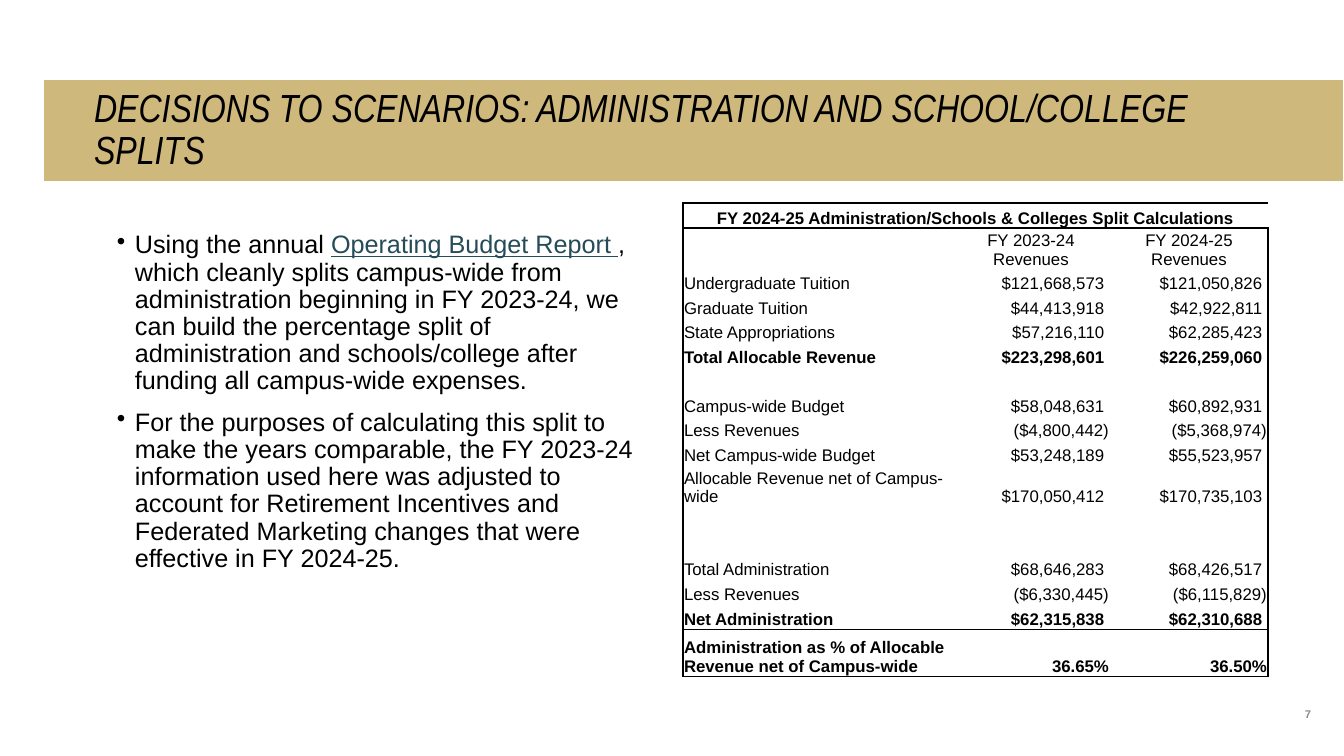
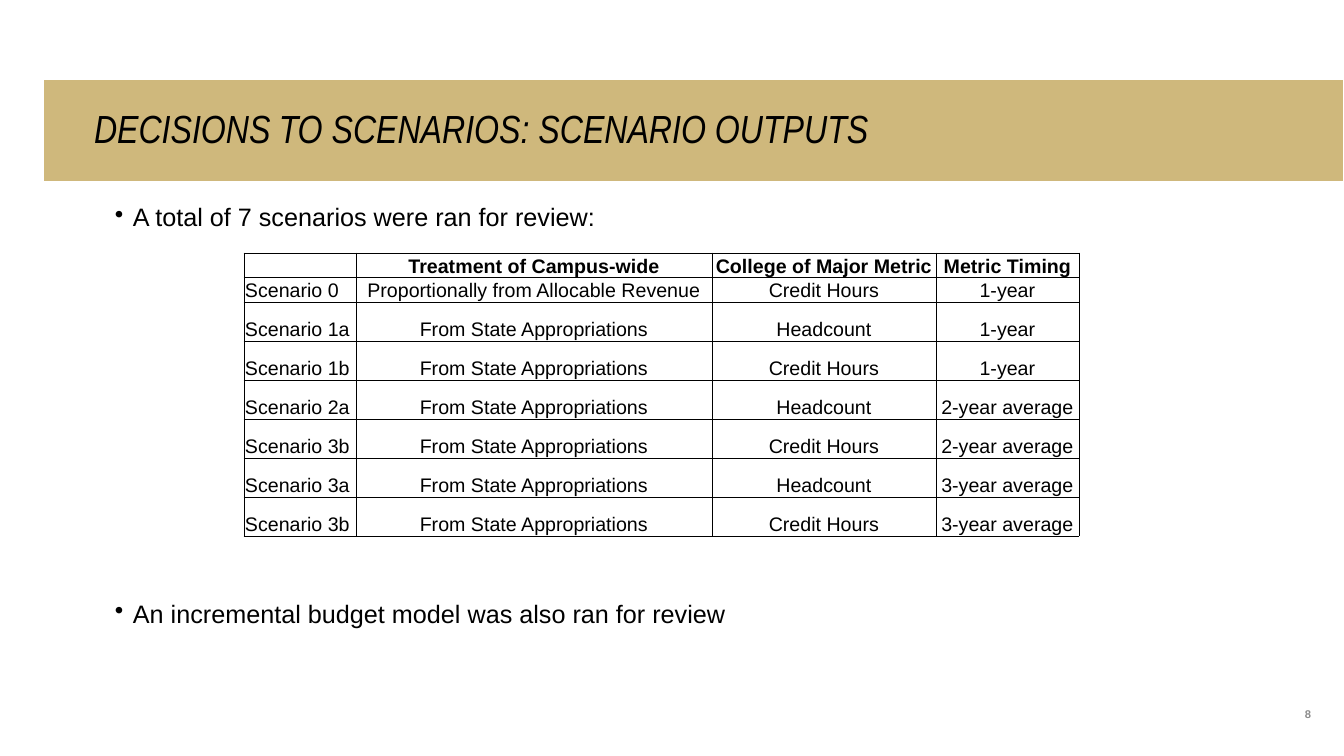
import pptx
import pptx.dml.color
import pptx.enum.text
import pptx.oxml.ns
import pptx.util
from lxml import etree

SCALE = 12192000 / 1344
COLOURS = {"band": "CFB87C", "ink": "000000", "link": "244C59", "number": "8C8C8C"}
BODY_FONT = "Arial"
TITLE_FONT = "Arial Narrow"
BAND_BOX = (44, 80, 1299, 101)
NUMBER_BOX = (1225, 671, 86, 50)
NO_GRID_STYLE = "{2D5ABB26-0587-4C30-8999-92F81FD0307C}"
ALIGN = pptx.enum.text.PP_ALIGN
ANCHOR = pptx.enum.text.MSO_ANCHOR

SPLIT_TITLE = "FY 2024-25 Administration/Schools & Colleges Split Calculations"
SPLIT_ROWS = [
    (SPLIT_TITLE, "", ""),
    ("", "FY 2023-24 Revenues", "FY 2024-25 Revenues"),
    ("Undergraduate Tuition", "$121,668,573 ", "$121,050,826 "),
    ("Graduate Tuition", "$44,413,918 ", "$42,922,811 "),
    ("State Appropriations", "$57,216,110 ", "$62,285,423 "),
    ("Total Allocable Revenue", "$223,298,601 ", "$226,259,060 "),
    ("", "", ""),
    ("Campus-wide Budget", "$58,048,631 ", "$60,892,931 "),
    ("Less Revenues", "($4,800,442)", "($5,368,974)"),
    ("Net Campus-wide Budget", "$53,248,189 ", "$55,523,957 "),
    ("Allocable Revenue net of Campus-wide", "$170,050,412 ", "$170,735,103 "),
    ("", "", ""),
    ("", "", ""),
    ("Total Administration", "$68,646,283 ", "$68,426,517 "),
    ("Less Revenues", "($6,330,445)", "($6,115,829)"),
    ("Net Administration", "$62,315,838 ", "$62,310,688 "),
    ("Administration as % of Allocable Revenue net of Campus-wide", "36.65%", "36.50%"),
]
SPLIT_HEIGHTS = [25, 38] + [24, 25] * 4 + [41] + [24, 25] * 2 + [25, 47]
SPLIT_BOLD_ROWS = {0, 5, 15, 16}

STATE = "From State Appropriations"
SCENARIO_ROWS = [
    ("", "Treatment of Campus-wide", "College of Major Metric", "Metric Timing"),
    ("Scenario 0", "Proportionally from Allocable Revenue", "Credit Hours", "1-year"),
    ("Scenario 1a", STATE, "Headcount", "1-year"),
    ("Scenario 1b", STATE, "Credit Hours", "1-year"),
    ("Scenario 2a", STATE, "Headcount", "2-year average"),
    ("Scenario 3b", STATE, "Credit Hours", "2-year average"),
    ("Scenario 3a", STATE, "Headcount", "3-year average"),
    ("Scenario 3b", STATE, "Credit Hours", "3-year average"),
]


def px(length):
    """Turn px into EMU."""
    return pptx.util.Emu(round(length * SCALE))


def style_font(font, size, colour="ink", name=BODY_FONT, bold=False, italic=False):
    """Set every font property of a run or paragraph."""
    font.name, font.size = name, pptx.util.Pt(size)
    font.bold, font.italic = bold, italic
    font.color.rgb = pptx.dml.color.RGBColor.from_string(COLOURS[colour])


def add_span(para, text, size, **style):
    """Add one formatted run to a paragraph."""
    span = para.add_run()
    span.text = text
    style_font(span.font, size, **style)
    return span


def set_margins(frame, left, top, right, bottom):
    """Set the insets of a text frame or cell."""
    frame.margin_left, frame.margin_top = px(left), px(top)
    frame.margin_right, frame.margin_bottom = px(right), px(bottom)


def add_textbox(slide, box):
    """Add a wrapping text box and return its frame."""
    frame = slide.shapes.add_textbox(*map(px, box)).text_frame
    frame.word_wrap = True
    set_margins(frame, 10, 5, 10, 5)
    return frame


def add_title_slide(deck, title, number):
    """Add a slide with the title band and the slide number."""
    slide = deck.slides.add_slide(deck.slide_layouts[5])
    band = slide.shapes.title
    band.left, band.top, band.width, band.height = map(px, BAND_BOX)
    band.fill.solid()
    band.fill.fore_color.rgb = pptx.dml.color.RGBColor.from_string(COLOURS["band"])
    frame = band.text_frame
    frame.word_wrap = True
    frame.auto_size = pptx.enum.text.MSO_AUTO_SIZE.NONE
    frame.vertical_anchor = ANCHOR.MIDDLE
    set_margins(frame, 50, 5, 101, 5)
    para = frame.paragraphs[0]
    para.alignment, para.line_spacing = ALIGN.LEFT, 0.9
    add_span(para, title, 28, name=TITLE_FONT, italic=True)

    frame = add_textbox(slide, NUMBER_BOX)
    frame.vertical_anchor = ANCHOR.BOTTOM
    set_margins(frame, 0, 0, 0, 0)
    para = frame.paragraphs[0]
    para.alignment = ALIGN.RIGHT
    add_span(para, str(number), 8, colour="number", bold=True)
    return slide


def add_bullets(slide, box, items, gap):
    """Add bulleted paragraphs, each a list of text and colour pairs."""
    frame = add_textbox(slide, box)
    for index, item in enumerate(items):
        para = frame.paragraphs[0] if index == 0 else frame.add_paragraph()
        properties = para._p.get_or_add_pPr()
        properties.set("marL", str(px(32)))
        properties.set("indent", str(-px(18)))
        bullet = etree.SubElement(properties, pptx.oxml.ns.qn("a:buChar"))
        bullet.set("char", "•")
        para.line_spacing = 0.9
        if index:
            para.space_before = pptx.util.Pt(gap)
        for text, colour in item:
            span = add_span(para, text, 18, colour=colour)
            span.font.underline = colour == "link"


def set_borders(cell, sides, width):
    """Draw the named sides of a cell and clear the others."""
    properties = cell._tc.get_or_add_tcPr()
    for side in "LRTB":
        line = etree.SubElement(properties, pptx.oxml.ns.qn(f"a:ln{side}"))
        if side in sides:
            line.set("w", str(pptx.util.Pt(width)))
            fill = etree.SubElement(line, pptx.oxml.ns.qn("a:solidFill"))
            colour = etree.SubElement(fill, pptx.oxml.ns.qn("a:srgbClr"))
            colour.set("val", COLOURS["ink"])
        else:
            etree.SubElement(line, pptx.oxml.ns.qn("a:noFill"))
    cell.fill.background()


def add_grid(slide, corner, widths, heights, rows, size, line_width, bold_rows, align_of, sides_of):
    """Add a plain table whose alignment and borders follow the given rules."""
    box = (*corner, sum(widths), sum(heights))
    table = slide.shapes.add_table(len(rows), len(widths), *map(px, box)).table
    table.first_row = table.horz_banding = False
    table._tbl.tblPr.find(pptx.oxml.ns.qn("a:tableStyleId")).text = NO_GRID_STYLE
    for column, width in zip(table.columns, widths):
        column.width = px(width)
    for row, height in zip(table.rows, heights):
        row.height = px(height)
    for r, texts in enumerate(rows):
        for c, text in enumerate(texts):
            cell = table.cell(r, c)
            cell.vertical_anchor = ANCHOR.BOTTOM
            set_margins(cell, 1, 1, 1, 0)
            set_borders(cell, sides_of(r, c), line_width)
            para = cell.text_frame.paragraphs[0]
            para.alignment = align_of(r, c)
            if text:
                add_span(para, text, size, bold=r in bold_rows)
            else:
                style_font(para.font, size)
                para._p.get_or_add_endParaRPr().set("sz", str(size * 100))
    return table


def split_align(r, c):
    """Centre the headings and set amounts to the right."""
    if r < 2:
        return ALIGN.CENTER
    return ALIGN.RIGHT if c else ALIGN.LEFT


def split_sides(r, c):
    """Frame the table and rule off its first and last rows."""
    last = len(SPLIT_ROWS) - 1
    sides = {0: "L", 2: "R"}.get(c, "")
    sides += "T" if r in (0, 1, last) else ""
    return sides + ("B" if r in (0, last - 1, last) else "")


def build_split_slide(deck):
    """Build the slide on the administration split."""
    slide = add_title_slide(
        deck, "DECISIONS TO SCENARIOS: ADMINISTRATION AND SCHOOL/COLLEGE SPLITS", 7)
    table = add_grid(slide, (683, 203), [269, 158, 158], SPLIT_HEIGHTS, SPLIT_ROWS, 12, 1,
                     SPLIT_BOLD_ROWS, split_align, split_sides)
    table.cell(0, 0).merge(table.cell(0, 2))
    add_bullets(slide, (93, 227, 569, 420), [
        [("Using the annual ", "ink"), ("Operating Budget Report ", "link"),
         (", which cleanly splits campus-wide from administration beginning in FY 2023-24, "
          "we can build the percentage split of administration and schools/college after "
          "funding all campus-wide expenses.", "ink")],
        [("For the purposes of calculating this split to make the years comparable, the "
          "FY 2023-24 information used here was adjusted to account for Retirement "
          "Incentives and Federated Marketing changes that were effective in FY 2024-25.",
          "ink")],
    ], 10)


def build_scenario_slide(deck):
    """Build the slide that lists the scenarios."""
    slide = add_title_slide(deck, "DECISIONS TO SCENARIOS: SCENARIO OUTPUTS", 8)
    add_bullets(slide, (91, 200, 1218, 498), [
        [("A total of 7 scenarios were ran for review:", "ink")],
        [("An incremental budget model was also ran for review", "ink")],
    ], 264)
    add_grid(slide, (244, 253), [112, 356, 224, 143], [23] * 2 + [39] * 6, SCENARIO_ROWS, 14, 0.5,
             {0}, lambda r, c: ALIGN.CENTER if r == 0 or c else ALIGN.LEFT,
             lambda r, c: "LRTB")


def main():
    """Build and save the deck."""
    deck = pptx.Presentation()
    deck.slide_width, deck.slide_height = px(1344), px(756)
    build_split_slide(deck)
    build_scenario_slide(deck)
    deck.save("out.pptx")


if __name__ == "__main__":
    main()
